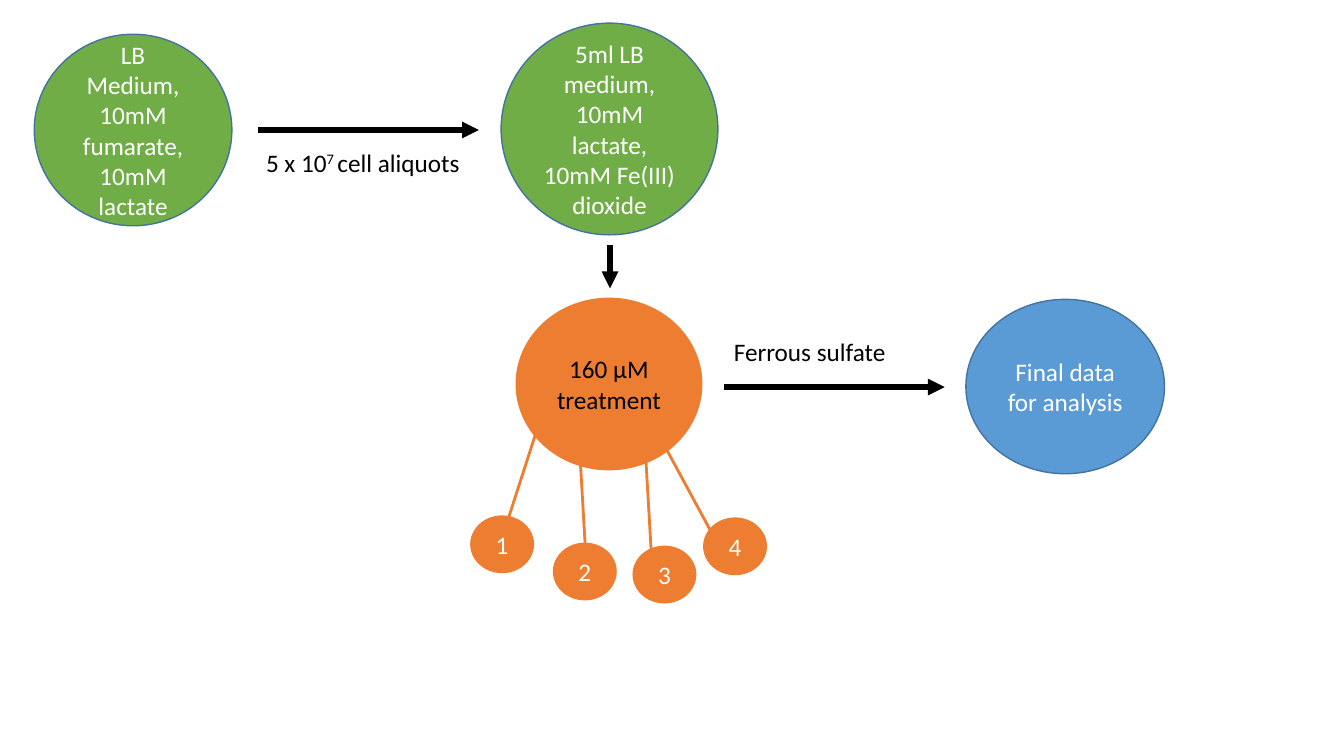
"""Draw the flow from culture medium to treatment and final data."""
from dataclasses import dataclass

from lxml import etree
from pptx import Presentation
from pptx.dml.color import RGBColor
from pptx.enum.shapes import MSO_CONNECTOR, MSO_SHAPE
from pptx.enum.text import MSO_ANCHOR, PP_ALIGN
from pptx.oxml.ns import qn
from pptx.util import Inches, Pt

OVAL = MSO_SHAPE.OVAL
STRAIGHT = MSO_CONNECTOR.STRAIGHT
MIDDLE = MSO_ANCHOR.MIDDLE
LEFT, CENTER = PP_ALIGN.LEFT, PP_ALIGN.CENTER


@dataclass(frozen=True)
class Theme:
    """Colours, font and sizes."""
    green: str = "70AD47"
    orange: str = "ED7D31"
    blue: str = "5B9BD5"
    edge: str = "43739E"
    black: str = "000000"
    white: str = "FFFFFF"
    font: str = "Calibri"
    size: int = 18
    rim: int = 1
    thin: int = 2
    thick: int = 4


def write(frame, runs, *, font, size, color, align=LEFT):
    """Fill a frame with (text, baseline) runs in one format."""
    para = frame.paragraphs[0]
    para.alignment = align
    for text, base in runs:
        run = para.add_run()
        run.text = text
        run.font.name = font
        run.font.size = Pt(size)
        run.font.color.rgb = RGBColor.from_string(color)
        if base:
            run._r.get_or_add_rPr().set("baseline", str(base * 1000))


class Board:
    """Hold the theme and the current slide."""

    def __init__(self, slide, theme):
        """Keep the slide and its style."""
        self.slide = slide
        self.theme = theme

    def circle(self, text, box, fill, edge, color):
        """Add a filled ellipse with centred text."""
        look = self.theme
        shape = self.slide.shapes.add_shape(OVAL, *map(Inches, box))
        shape.shadow.inherit = False
        shape.fill.solid()
        shape.fill.fore_color.rgb = RGBColor.from_string(fill)
        shape.line.color.rgb = RGBColor.from_string(edge)
        shape.line.width = Pt(look.rim)
        frame = shape.text_frame
        frame.word_wrap = True
        frame.vertical_anchor = MIDDLE
        write(frame, [(text, 0)], font=look.font, size=look.size,
              color=color, align=CENTER)

    def label(self, runs, box, wrap=True):
        """Add a text box."""
        look = self.theme
        frame = self.slide.shapes.add_textbox(*map(Inches, box)).text_frame
        frame.word_wrap = wrap
        write(frame, runs, font=look.font, size=look.size, color=look.black)

    def link(self, start, end, color, width, head=False):
        """Add a straight line, with an arrowhead if asked."""
        line = self.slide.shapes.add_connector(
            STRAIGHT, *map(Inches, (*start, *end)))
        line.line.color.rgb = RGBColor.from_string(color)
        line.line.width = Pt(width)
        if head:
            etree.SubElement(line.line._get_or_add_ln(), qn("a:tailEnd"),
                             type="triangle")
        etree.SubElement(line._element.spPr, qn("a:effectLst"))


def main():
    """Build the slide and save it."""
    deck = Presentation()
    deck.slide_width, deck.slide_height = Inches(13.33), Inches(7.5)
    look = Theme()
    board = Board(deck.slides.add_slide(deck.slide_layouts[6]), look)

    stages = [
        ("LB Medium, 10mM fumarate, 10mM lactate",
         (0.34, 0.34, 1.96, 1.9), look.green, look.edge, look.white),
        ("5ml LB medium, 10mM lactate, 10mM Fe(III) dioxide",
         (4.97, 0.23, 2.15, 2.1), look.green, look.edge, look.white),
        ("160 µM treatment",
         (5.12, 2.96, 1.84, 1.7), look.orange, look.orange, look.black),
        ("Final data for analysis",
         (9.58, 2.97, 1.97, 1.73), look.blue, look.edge, look.white),
    ]
    for stage in stages:
        board.circle(*stage)

    arrows = [
        ((2.56, 1.29), (4.75, 1.29)),
        ((6.05, 2.43), (6.05, 2.86)),
        ((7.18, 3.84), (9.37, 3.84)),
    ]
    for start, end in arrows:
        board.link(start, end, look.black, look.thick, head=True)

    board.label([("5 x 10", 0), ("7 ", 30), ("cell aliquots", 0)],
                (2.54, 1.41, 2.18, 0.4), wrap=False)
    board.label([("Ferrous sulfate", 0)], (7.18, 3.29, 2.19, 0.4))

    samples = [
        ((4.67, 5.12), (5.34, 4.22), (5.03, 5.18)),
        ((5.49, 5.39), (5.75, 4.48), (5.81, 5.51)),
        ((6.28, 5.42), (6.4, 4.46), (6.46, 5.49)),
        ((6.98, 5.14), (6.59, 4.42), (7.05, 5.27)),
    ]
    for count, (spot, start, end) in enumerate(samples, 1):
        board.link(start, end, look.orange, look.thin)
        board.circle(str(count), (*spot, 0.62, 0.56),
                     look.orange, look.orange, look.white)

    deck.save("out.pptx")


if __name__ == "__main__":
    main()
